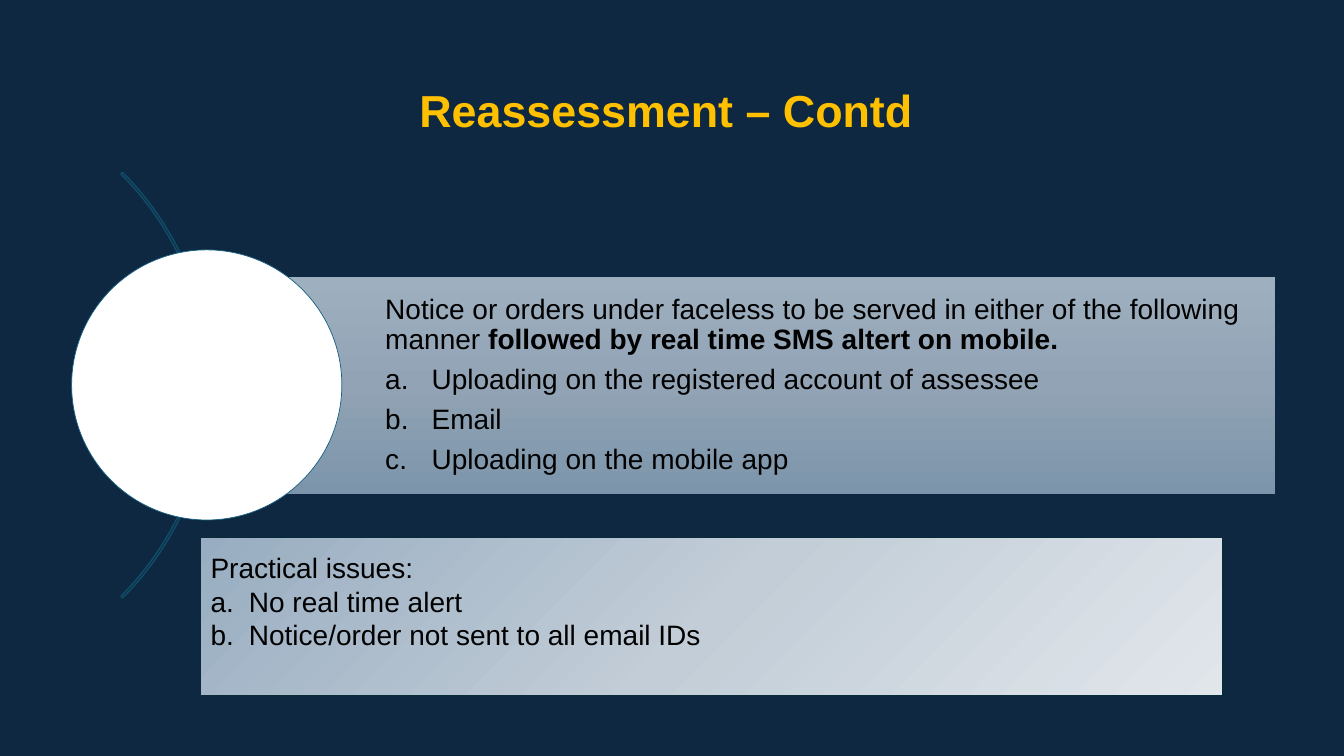
import copy
import lxml.etree
import pptx
import pptx.dml.color
import pptx.enum.shapes
import pptx.enum.text
import pptx.oxml.ns
import pptx.util

WIDE = pptx.util.Inches(13.33)
HIGH = pptx.util.Inches(7.5)
FONT = "Arial"
HEX = {
    "back": "0E2841", "gold": "FFC000", "ink": "000000", "white": "FFFFFF",
    "arc": "114D68", "ring": "156082", "edge": "092A39",
}
BAND = ["9EAFBF", "91A3B4", "7C95AB"]
PANEL = ["98ADC1", "C2CDD7", "E1E6EB"]
KIND = pptx.enum.shapes.MSO_SHAPE
ANCHOR = pptx.enum.text.MSO_ANCHOR
ALIGN = pptx.enum.text.PP_ALIGN


def rgb(code):
    return pptx.dml.color.RGBColor.from_string(code)


def part(box, left, top, wide, high):
    x, y, w, h = box
    return (int(x + w * left / 100), int(y + h * top / 100),
            int(w * wide / 100), int(h * high / 100))


def move(shape, box):
    shape.left, shape.top, shape.width, shape.height = box


def blend(shape, codes, angle):
    shape.fill.gradient()
    shape.fill.gradient_angle = angle
    stops = shape._element.spPr.find(".//" + pptx.oxml.ns.qn("a:gsLst"))
    stops.insert(1, copy.deepcopy(stops[0]))
    for i, stop in enumerate(shape.fill.gradient_stops):
        stop.color.rgb = rgb(codes[i])
        stop.position = i / 2


def add(slide, kind, box, line, width):
    shape = slide.shapes.add_shape(kind, *box)
    shape.shadow.inherit = False
    shape.line.color.rgb = rgb(HEX[line])
    shape.line.width = pptx.util.Pt(width)
    return shape


def style(frame, size, color, bold=None):
    for para in frame.paragraphs:
        for run in para.runs:
            run.font.name = FONT
            run.font.size = pptx.util.Pt(size)
            run.font.color.rgb = rgb(HEX[color])
            if bold is not None:
                run.font.bold = bold


def letter(para, indent):
    props = para._p.get_or_add_pPr()
    props.set("marL", str(indent))
    props.set("indent", str(-indent))
    mark = lxml.etree.SubElement(props, pptx.oxml.ns.qn("a:buAutoNum"))
    mark.set("type", "alphaLcPeriod")


def title(slide, box):
    head = slide.shapes.title
    move(head, box)
    frame = head.text_frame
    frame.text = "Reassessment – Contd "
    frame.vertical_anchor = ANCHOR.MIDDLE
    frame.paragraphs[0].alignment = ALIGN.CENTER
    frame.paragraphs[0].line_spacing = 0.9
    style(frame, 32, "gold", True)


def notice(slide, box):
    band = slide.placeholders[1]
    move(band, part(box, 11.31, 24.53, 88.69, 50.95))
    blend(band, BAND, 270)
    frame = band.text_frame
    frame.text = "\n".join([
        "Notice or orders under faceless to be served in either of the following manner ",
        "Uploading on the registered account of assessee",
        "Email",
        "Uploading on the mobile app",
    ])
    frame.auto_size = pptx.enum.text.MSO_AUTO_SIZE.NONE
    frame.vertical_anchor = ANCHOR.MIDDLE
    frame.margin_left = int(band.width * 0.1662)
    frame.margin_right = frame.margin_top = frame.margin_bottom = pptx.util.Inches(0.06)
    lead, *items = frame.paragraphs
    bold = lead.add_run()
    bold.text = "followed by real time SMS altert on mobile."
    bold.font.bold = True
    for para in frame.paragraphs:
        para.line_spacing = 0.9
        para.space_before = pptx.util.Pt(0)
        para.space_after = pptx.util.Pt(7)
    props = lead._p.get_or_add_pPr()
    props.set("marL", "0")
    props.set("indent", "0")
    lxml.etree.SubElement(props, pptx.oxml.ns.qn("a:buNone"))
    for para in items:
        letter(para, pptx.util.Inches(0.46))
    style(frame, 20, "ink")

    arc = add(slide, KIND.BLOCK_ARC, part(box, -38.44, -20.85, 50, 141.47), "arc", 1)
    arc.fill.background()
    for i, turn in enumerate([189, 27, 0.004]):
        arc.adjustments[i] = turn

    disc = add(slide, KIND.OVAL, part(box, 0, 18.1, 22.45, 63.5), "ring", 0.5)
    disc.fill.solid()
    disc.fill.fore_color.rgb = rgb(HEX["white"])


def issues(slide, box):
    panel = add(slide, KIND.RECTANGLE, box, "edge", 1)
    blend(panel, PANEL, 315)
    frame = panel.text_frame
    frame.text = "\n".join([
        "Practical issues:",
        "No real time alert",
        "Notice/order not sent to all email IDs",
    ])
    frame.word_wrap = True
    frame.vertical_anchor = ANCHOR.TOP
    frame.margin_top = pptx.util.Inches(0.13)
    for para in frame.paragraphs:
        para.alignment = ALIGN.LEFT
    for para in frame.paragraphs[1:]:
        letter(para, pptx.util.Inches(0.38))
    style(frame, 20, "ink")


def main():
    deck = pptx.Presentation()
    deck.slide_width, deck.slide_height = WIDE, HIGH
    slide = deck.slides.add_slide(deck.slide_layouts[1])
    slide.background.fill.solid()
    slide.background.fill.fore_color.rgb = rgb(HEX["back"])
    page = (0, 0, WIDE, HIGH)
    title(slide, part(page, 6.9, 5.33, 86.27, 19.33))
    notice(slide, part(page, 5.33, 22.87, 89.57, 56.27))
    issues(slide, part(page, 14.93, 71.07, 76.07, 20.93))
    deck.save("out.pptx")


if __name__ == "__main__":
    main()
